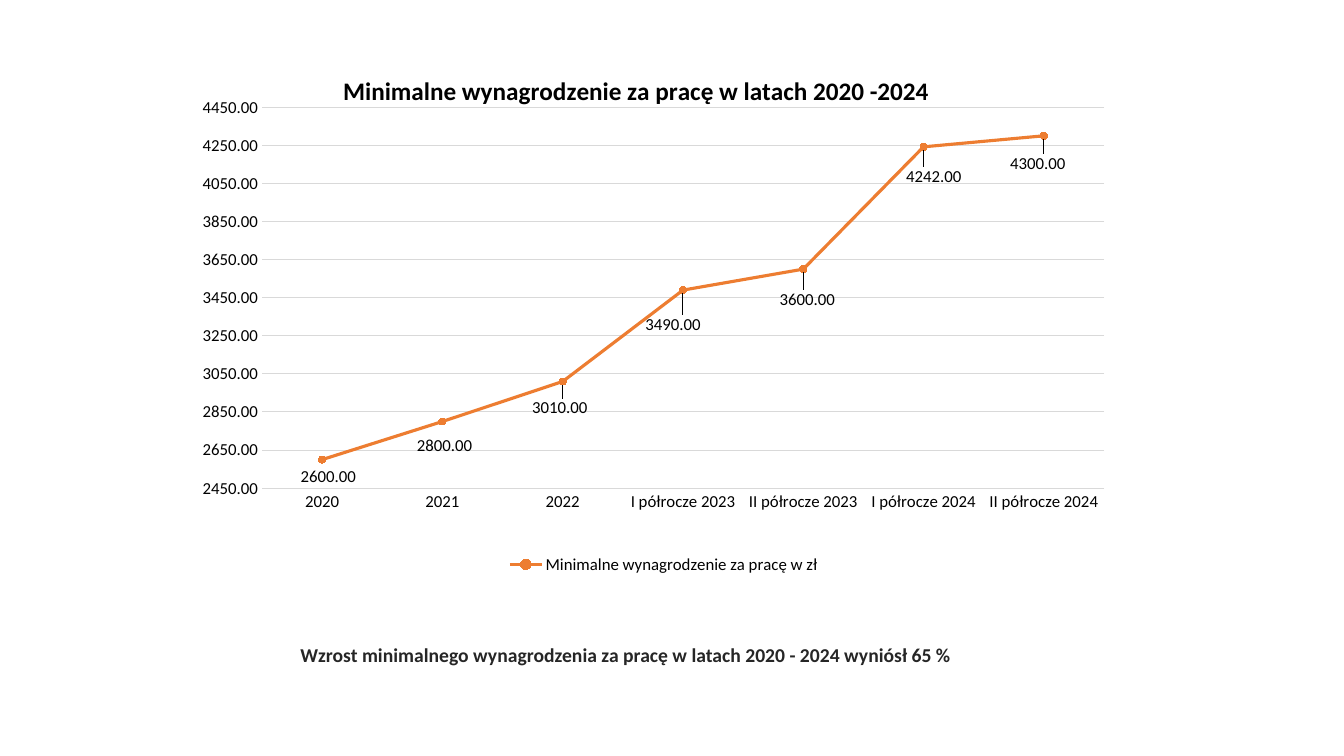
from dataclasses import dataclass
from typing import Optional

from lxml import etree
from pptx import Presentation
from pptx import util as u
from pptx.chart import data as chart_data
from pptx.dml import color as dml
from pptx.enum import chart as chart_enum
from pptx.enum import text
from pptx.oxml import ns

COLORS = {"text": "000000", "note": "262626", "grid": "D9D9D9", "wage": "ED7D31"}
FONT = "Calibri"
NUMBER_FORMAT = "0.00"
CHART_WIDTH, CHART_HEIGHT = 9.49, 5.4


@dataclass
class Wage:
    period: str
    amount: int
    shift_x: float
    shift_y: float


@dataclass
class Layout:
    x: float
    y: float
    width: Optional[float] = None
    height: Optional[float] = None
    inner: bool = False
    edge: bool = True


WAGES = [
    Wage("2020", 2600, 0.06, 0),
    Wage("2021", 2800, 0.02, 0.07),
    Wage("2022", 3010, -0.03, 0.09),
    Wage("I półrocze 2023", 3490, -0.1, 0.17),
    Wage("II półrocze 2023", 3600, 0.04, 0.13),
    Wage("I półrocze 2024", 4242, 0.1, 0.12),
    Wage("II półrocze 2024", 4300, -0.06, 0.1),
]


def rgb(name: str) -> dml.RGBColor:
    return dml.RGBColor.from_string(COLORS[name])


def style_font(font, size: float, color: str = "text", bold: bool = False) -> None:
    font.name = FONT
    font.size = u.Pt(size)
    font.bold = bold
    font.color.rgb = rgb(color)


def style_line(line, color: str, width: float) -> None:
    line.color.rgb = rgb(color)
    line.width = u.Pt(width)


def add_value(parent, tag: str, value) -> None:
    etree.SubElement(parent, ns.qn(tag)).set("val", str(value))


def place(element, index: int, layout: Layout) -> None:
    for previous in element.findall(ns.qn("c:layout")):
        element.remove(previous)
    holder = etree.Element(ns.qn("c:layout"))
    manual = etree.SubElement(holder, ns.qn("c:manualLayout"))
    if layout.inner:
        add_value(manual, "c:layoutTarget", "inner")
    if layout.edge:
        add_value(manual, "c:xMode", "edge")
        add_value(manual, "c:yMode", "edge")
    add_value(manual, "c:x", layout.x)
    add_value(manual, "c:y", layout.y)
    if layout.width is not None:
        add_value(manual, "c:w", layout.width)
        add_value(manual, "c:h", layout.height)
    element.insert(index, holder)


def style_axes(chart) -> None:
    for axis in (chart.category_axis, chart.value_axis):
        axis.major_tick_mark = chart_enum.XL_TICK_MARK.NONE
        axis.minor_tick_mark = chart_enum.XL_TICK_MARK.NONE
        style_font(axis.tick_labels.font, 12)
    style_line(chart.category_axis.format.line, "grid", 0.75)
    value_axis = chart.value_axis
    value_axis.minimum_scale, value_axis.maximum_scale = 2450, 4450
    value_axis.major_unit = 200
    value_axis.format.line.fill.background()
    value_axis.has_major_gridlines = True
    style_line(value_axis.major_gridlines.format.line, "grid", 0.75)
    value_axis.tick_labels.number_format = NUMBER_FORMAT
    value_axis.tick_labels.number_format_is_linked = False


def style_series(series) -> None:
    series.smooth = False
    style_line(series.format.line, "wage", 2.25)
    series.marker.style = chart_enum.XL_MARKER_STYLE.CIRCLE
    series.marker.size = 5
    series.marker.format.fill.solid()
    series.marker.format.fill.fore_color.rgb = rgb("wage")
    style_line(series.marker.format.line, "wage", 0.75)

    labels = series.data_labels
    labels.show_value = True
    labels.number_format = NUMBER_FORMAT
    labels.number_format_is_linked = False
    labels.position = chart_enum.XL_LABEL_POSITION.BELOW
    style_font(labels.font, 12)
    for index, wage in enumerate(WAGES):
        label = series.points[index].data_label
        style_font(label.font, 12)
        label.position = chart_enum.XL_LABEL_POSITION.BELOW
    for wage, element in zip(WAGES, series._element.iter(ns.qn("c:dLbl"))):
        shift = Layout(wage.shift_x / CHART_WIDTH, wage.shift_y / CHART_HEIGHT, edge=False)
        place(element, 1, shift)
        number_format = etree.Element(ns.qn("c:numFmt"))
        number_format.set("formatCode", NUMBER_FORMAT)
        number_format.set("sourceLinked", "0")
        element.insert(2, number_format)


def add_wage_chart(slide) -> None:
    data = chart_data.CategoryChartData(number_format=NUMBER_FORMAT)
    data.categories = [wage.period for wage in WAGES]
    data.add_series("Minimalne wynagrodzenie za pracę w zł", [wage.amount for wage in WAGES])
    chart = slide.shapes.add_chart(
        chart_enum.XL_CHART_TYPE.LINE_MARKERS_STACKED,
        u.Inches(1.65), u.Inches(0.47), u.Inches(CHART_WIDTH), u.Inches(CHART_HEIGHT), data,
    ).chart
    style_font(chart.font, 10)
    chart.plots[0].vary_by_categories = False
    style_axes(chart)
    style_series(chart.plots[0].series[0])

    chart.has_title = True
    title = chart.chart_title.text_frame
    title.text = "Minimalne wynagrodzenie za pracę w latach 2020 -2024"
    style_font(title.paragraphs[0].runs[0].font, 18, bold=True)

    chart.has_legend = True
    chart.legend.position = chart_enum.XL_LEGEND_POSITION.RIGHT
    chart.legend.include_in_layout = False
    style_font(chart.legend.font, 12)

    root = chart._chartSpace
    place(root.find(".//" + ns.qn("c:title")), 1, Layout(0.18, 0.04))
    place(root.find(".//" + ns.qn("c:plotArea")), 0, Layout(0.1, 0.11, 0.88, 0.7, inner=True))
    place(root.find(".//" + ns.qn("c:legend")), 1, Layout(0.35, 0.92, 0.34, 0.06))


def add_growth_note(slide) -> None:
    shape = slide.shapes.add_textbox(u.Inches(2.88), u.Inches(6.33), u.Inches(6.8), u.Inches(0.34))
    frame = shape.text_frame
    frame.word_wrap = True
    frame.auto_size = text.MSO_AUTO_SIZE.SHAPE_TO_FIT_TEXT
    frame.text = "Wzrost minimalnego wynagrodzenia za pracę w latach 2020 - 2024 wyniósł 65 %"
    paragraph = frame.paragraphs[0]
    paragraph.alignment = text.PP_ALIGN.JUSTIFY
    style_font(paragraph.runs[0].font, 14, "note", bold=True)


def main() -> None:
    presentation = Presentation()
    presentation.slide_width = u.Inches(13.33)
    presentation.slide_height = u.Inches(7.5)
    slide = presentation.slides.add_slide(presentation.slide_layouts[6])
    add_wage_chart(slide)
    add_growth_note(slide)
    presentation.save("out.pptx")


if __name__ == "__main__":
    main()
